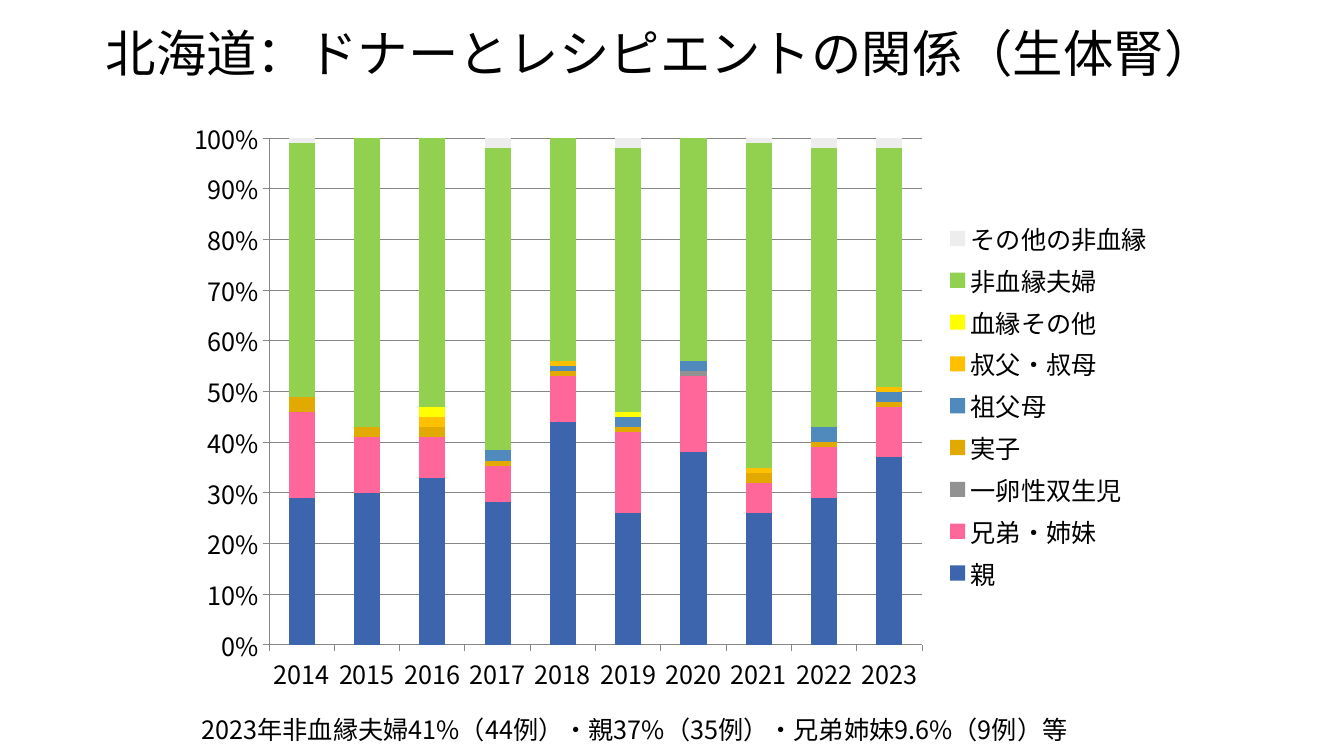
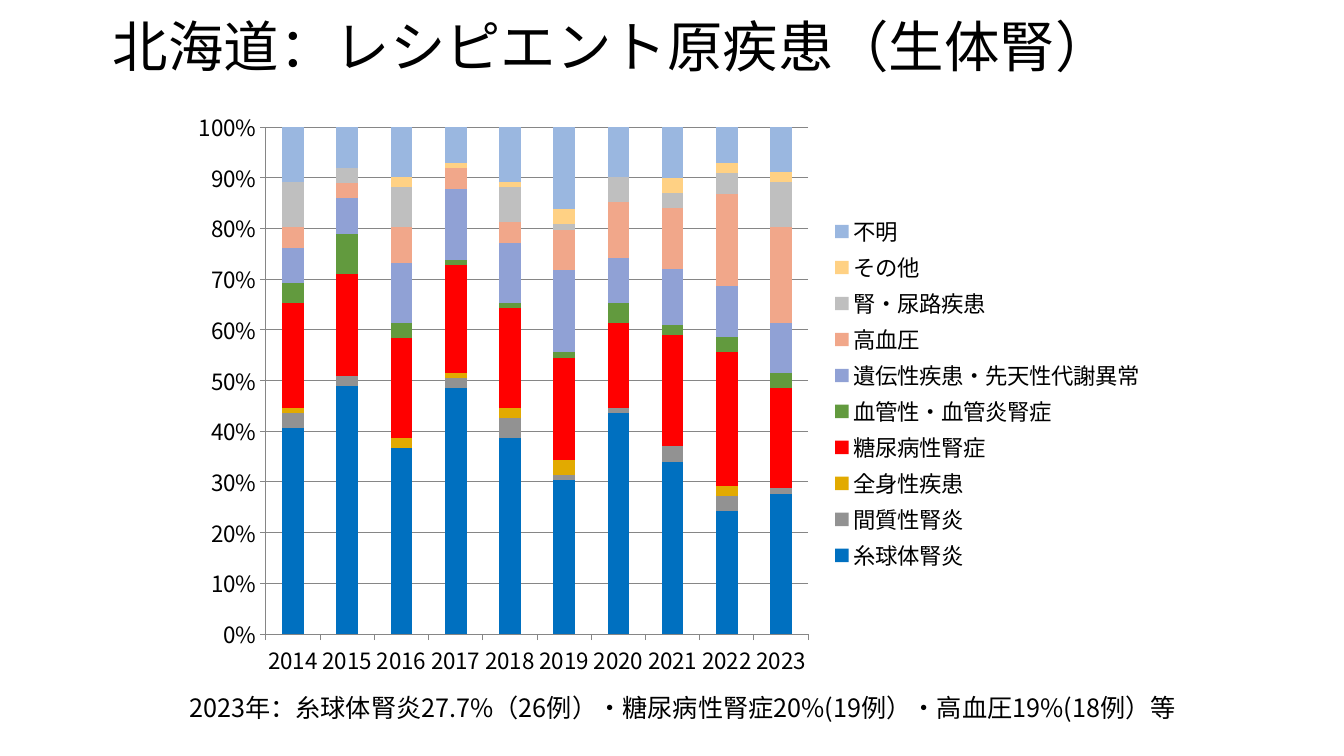
from lxml.etree import SubElement
from pptx import Presentation
from pptx.chart.data import CategoryChartData
from pptx.dml.color import RGBColor
from pptx.enum.chart import XL_CHART_TYPE, XL_LEGEND_POSITION, XL_TICK_MARK
from pptx.enum.text import MSO_ANCHOR, MSO_AUTO_SIZE, PP_ALIGN
from pptx.oxml.ns import qn
from pptx.util import Cm, Pt

FONT = "Noto Sans CJK JP"
BLACK = RGBColor(0x00, 0x00, 0x00)
AXIS = RGBColor(0x86, 0x86, 0x86)
NAVY = RGBColor(0x3D, 0x65, 0xAE)
PINK = RGBColor(0xFF, 0x66, 0x99)
GRAY = RGBColor(0x92, 0x92, 0x92)
OCHRE = RGBColor(0xE2, 0xAA, 0x00)
STEEL = RGBColor(0x50, 0x89, 0xBC)
AMBER = RGBColor(0xFF, 0xC0, 0x00)
YELLOW = RGBColor(0xFF, 0xFF, 0x00)
LIME = RGBColor(0x92, 0xD0, 0x50)
PALE_GRAY = RGBColor(0xED, 0xED, 0xED)
BLUE = RGBColor(0x00, 0x70, 0xC0)
RED = RGBColor(0xFF, 0x00, 0x00)
GREEN = RGBColor(0x62, 0x9A, 0x3E)
LAVENDER = RGBColor(0x90, 0xA1, 0xD5)
SALMON = RGBColor(0xF1, 0xA7, 0x8A)
SILVER = RGBColor(0xBF, 0xBF, 0xBF)
CREAM = RGBColor(0xFF, 0xD1, 0x84)
SKY = RGBColor(0x9A, 0xB7, 0xE0)

YEARS = [str(year) for year in range(2014, 2024)]

SLIDES = [
    {
        "title": "北海道：ドナーとレシピエントの関係（生体腎）",
        "title_size": 36,
        "title_box": (2.41, 0.3, 29.21, 2.24),
        "note": "2023年非血縁夫婦41%（44例）・親37%（35例）・兄弟姉妹9.6%（9例）等",
        "note_box": (4.83, 17.88, 28.17, 1.02),
        "chart_box": (4.39, 2.72, 24.94, 15.01),
        "chart_size": 18,
        "series": [
            ("親", NAVY, (29, 30, 33, 28, 44, 26, 38, 26, 29, 37)),
            ("兄弟・姉妹", PINK, (17, 11, 8, 7, 9, 16, 15, 6, 10, 10)),
            ("一卵性双生児", GRAY, (0, 0, 0, 0, 0, 0, 1, 0, 0, 0)),
            ("実子", OCHRE, (3, 2, 2, 1, 1, 1, 0, 2, 1, 1)),
            ("祖父母", STEEL, (0, 0, 0, 2, 1, 2, 2, 0, 3, 2)),
            ("叔父・叔母", AMBER, (0, 0, 2, 0, 1, 0, 0, 1, 0, 1)),
            ("血縁その他", YELLOW, (0, 0, 2, 0, 0, 1, 0, 0, 0, 0)),
            ("非血縁夫婦", LIME, (50, 57, 53, 59, 44, 52, 44, 64, 55, 47)),
            ("その他の非血縁", PALE_GRAY, (1, 0, 0, 2, 0, 2, 0, 1, 2, 2)),
        ],
    },
    {
        "title": "北海道：レシピエント原疾患（生体腎）",
        "title_size": 39.6,
        "title_box": (2.59, 0, 26.49, 2.51),
        "note": "2023年：糸球体腎炎27.7%（26例）・糖尿病性腎症20%(19例）・高血圧19%(18例）等",
        "note_box": (4.52, 17.32, 25.86, 1.02),
        "chart_box": (4.52, 2.51, 24.61, 14.81),
        "chart_size": 16,
        "series": [
            ("糸球体腎炎", BLUE, (41, 49, 37, 48, 39, 30, 44, 34, 24, 28)),
            ("間質性腎炎", GRAY, (3, 2, 0, 2, 4, 1, 1, 3, 3, 1)),
            ("全身性疾患", OCHRE, (1, 0, 2, 1, 2, 3, 0, 0, 2, 0)),
            ("糖尿病性腎症", RED, (21, 20, 20, 21, 20, 20, 17, 22, 26, 20)),
            ("血管性・血管炎腎症", GREEN, (4, 8, 3, 1, 1, 1, 4, 2, 3, 3)),
            ("遺伝性疾患・先天性代謝異常", LAVENDER, (7, 7, 12, 14, 12, 16, 9, 11, 10, 10)),
            ("高血圧", SALMON, (4, 3, 7, 4, 4, 8, 11, 12, 18, 19)),
            ("腎・尿路疾患", SILVER, (9, 3, 8, 0, 7, 1, 5, 3, 4, 9)),
            ("その他", CREAM, (0, 0, 2, 1, 1, 3, 0, 3, 2, 2)),
            ("不明", SKY, (11, 8, 10, 7, 11, 16, 10, 10, 7, 9)),
        ],
    },
]


def write_text(tf, text, size, anchor=MSO_ANCHOR.TOP, line_spacing=1.0):
    tf.word_wrap = True
    tf.auto_size = MSO_AUTO_SIZE.NONE
    tf.vertical_anchor = anchor
    p = tf.paragraphs[0]
    p.alignment = PP_ALIGN.LEFT
    p.line_spacing = line_spacing
    r = p.add_run()
    r.text = text
    r.font.size = Pt(size)
    r.font.name = FONT
    r.font.color.rgb = BLACK
    SubElement(r._r.get_or_add_rPr(), qn("a:ea"), typeface=FONT)


def add_stacked_chart(s, box, series, size):
    data = CategoryChartData(number_format="0")
    data.categories = YEARS
    for name, color, values in series:
        data.add_series(name, values)
    chart = s.shapes.add_chart(XL_CHART_TYPE.COLUMN_STACKED_100, *box, data).chart
    chart.has_title = False
    chart.font.size = Pt(size)
    chart.font.name = FONT
    chart.font.color.rgb = BLACK
    for latin in list(chart.element.iter(qn("a:latin"))):
        SubElement(latin.getparent(), qn("a:ea"), typeface=FONT)

    chart.has_legend = True
    chart.legend.position = XL_LEGEND_POSITION.RIGHT
    chart.legend.include_in_layout = False

    plot = chart.plots[0]
    plot.gap_width = 150
    plot.overlap = 100
    plot.vary_by_categories = False
    for ser, (name, color, values) in zip(plot.series, series):
        ser.format.fill.solid()
        ser.format.fill.fore_color.rgb = color

    value_axis = chart.value_axis
    value_axis.has_major_gridlines = True
    value_axis.tick_labels.number_format = "0%"
    value_axis.tick_labels.number_format_is_linked = False
    for axis in (chart.category_axis, value_axis):
        axis.major_tick_mark = XL_TICK_MARK.OUTSIDE
    for part in (chart.category_axis, value_axis, value_axis.major_gridlines):
        part.format.line.color.rgb = AXIS
        part.format.line.width = Pt(0.75)


prs = Presentation()
prs.slide_width = Cm(33.87)
prs.slide_height = Cm(19.05)

for content in SLIDES:
    s = prs.slides.add_slide(prs.slide_layouts[5])
    title = s.shapes.title
    title.left, title.top, title.width, title.height = map(Cm, content["title_box"])
    write_text(title.text_frame, content["title"], content["title_size"],
               anchor=MSO_ANCHOR.MIDDLE, line_spacing=0.9)
    note = s.shapes.add_textbox(*map(Cm, content["note_box"]))
    write_text(note.text_frame, content["note"], 18)
    add_stacked_chart(s, map(Cm, content["chart_box"]), content["series"], content["chart_size"])

prs.save("out.pptx")
